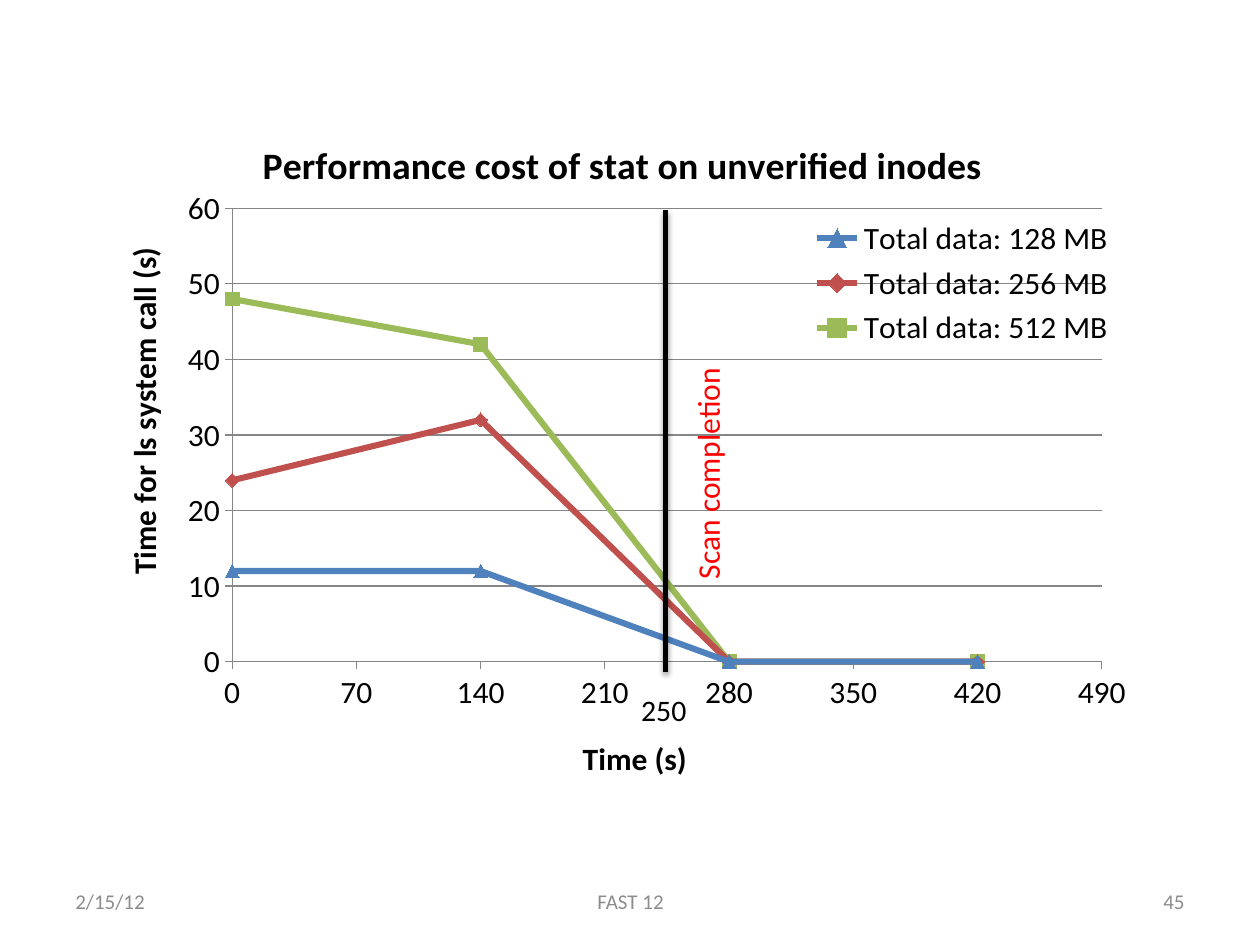
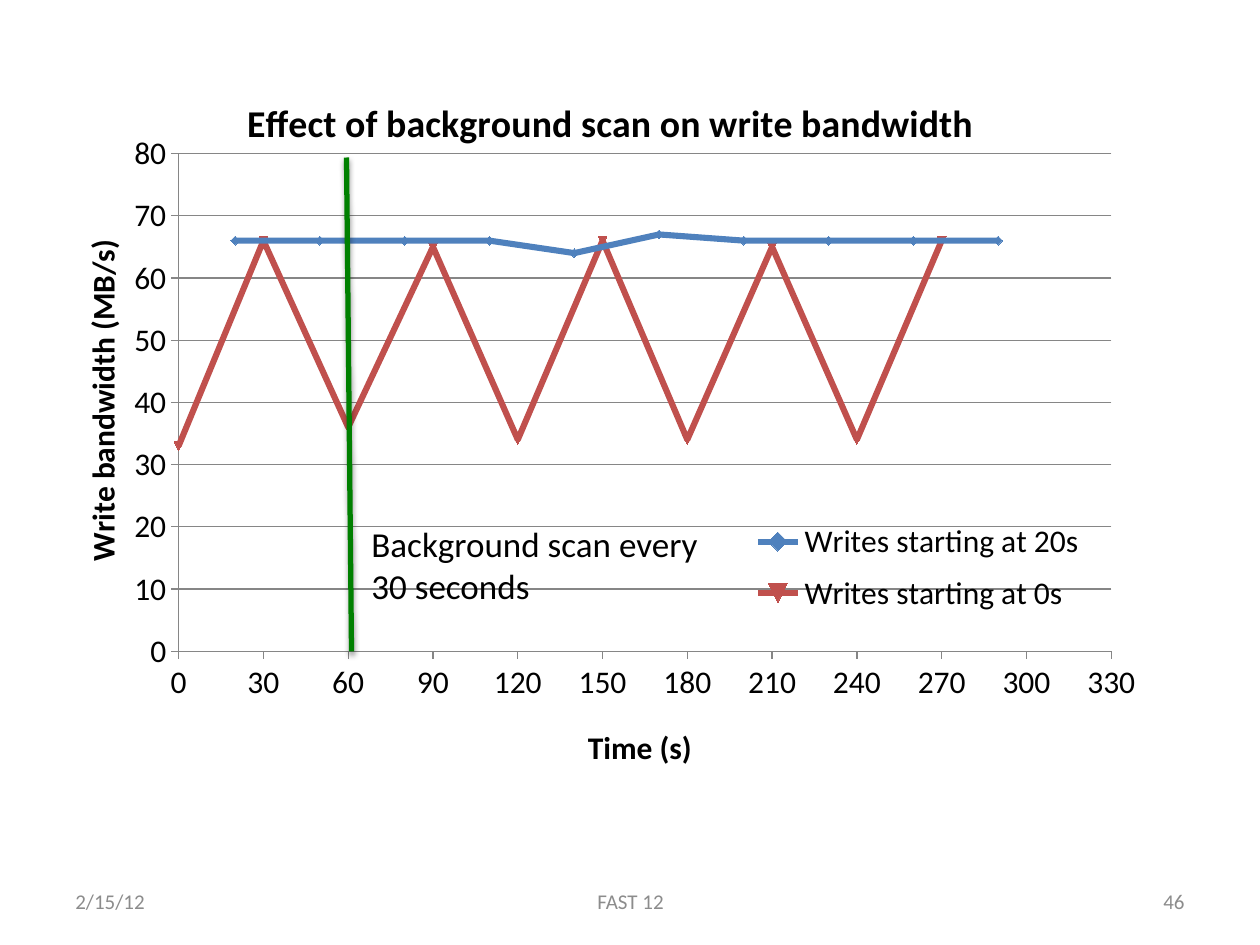
import pptx
import pptx.chart.data
import pptx.dml.color
import pptx.enum.chart
import pptx.enum.shapes
import pptx.enum.text
import pptx.oxml
import pptx.oxml.ns
import pptx.util
from dataclasses import dataclass

Inches, Pt = pptx.util.Inches, pptx.util.Pt
ALIGN = pptx.enum.text.PP_ALIGN
ANCHOR = pptx.enum.text.MSO_ANCHOR
MARKER = pptx.enum.chart.XL_MARKER_STYLE
qn = pptx.oxml.ns.qn


@dataclass(frozen=True)
class Theme:
    font: str = "Calibri"
    text: str = "000000"
    footer: str = "8C8C8C"
    grid: str = "868686"
    blue: str = "4F81BD"
    red: str = "C0504D"
    green: str = "9BBB59"
    scan_green: str = "008000"
    alert: str = "FF0000"
    footer_size: float = 12
    chart_size: float = 18
    title_size: float = 21.6
    series_width: float = 3.5
    rule_width: float = 3


T = Theme()

# Content: boxes are left, top, width, height in inches;
# layouts are fractions of the chart area
FOOTERS = [
    ("2/15/12", (0.5, 6.95, 2.33, 0.4), ALIGN.LEFT),
    ("FAST 12", (3.42, 6.95, 3.17, 0.4), ALIGN.CENTER),
    ("{number}", (7.17, 6.95, 2.33, 0.4), ALIGN.RIGHT),
]

STAT_TIMES = (0, 140, 280, 420)
SLIDES = [
    {
        "number": 45,
        "box": (0.67, 0.83, 8.5, 5.42),
        "title": ("Performance cost of stat on unverified inodes", (0.16, 0.04)),
        "x_axis": ("Time (s)", (0.46, 0.93), 490, 70),
        "y_axis": ("Time for ls system call (s)", (0.03, 0.21), 60, 10),
        "plot": (0.138, 0.154, 0.812, 0.673),
        "legend": (0.68, 0.16, 0.28, 0.21),
        "marker_size": 8,
        "series": [
            ("Total data: 128 MB", T.blue, MARKER.TRIANGLE, STAT_TIMES, (12, 12, 0, 0)),
            ("Total data: 256 MB", T.red, MARKER.DIAMOND, STAT_TIMES, (24, 32, 0, 0)),
            ("Total data: 512 MB", T.green, MARKER.SQUARE, STAT_TIMES, (48, 42, 0, 0)),
        ],
        "rule": ((5.28, 5.33), (5.28, 1.67), T.text),
        "labels": [
            ("250", (4.99, 5.44, 0.67, 0.39), 17, T.text, 0),
            ("Scan completion", (4.15, 2.93, 3.03, 0.5), 18, T.alert, 270),
        ],
    },
    {
        "number": 46,
        "box": (0.42, 0.42, 8.75, 5.75),
        "title": ("Effect of background scan on write bandwidth", (0.17, 0.05)),
        "x_axis": ("Time (s)", (0.48, 0.92), 330, 30),
        "y_axis": ("Write bandwidth (MB/s)", (0.02, 0.25), 80, 10),
        "plot": (0.114, 0.139, 0.846, 0.687),
        "legend": (0.63, 0.63, 0.31, 0.16),
        "marker_size": 5,
        "series": [
            ("Writes starting at 20s", T.blue, None, range(20, 300, 30),
             (66, 66, 66, 66, 64, 67, 66, 66, 66, 66)),
            ("Writes starting at 0s", T.red, None, range(0, 300, 30),
             (33, 66, 36, 65, 34, 66, 34, 65, 34, 66)),
        ],
        "rule": ((2.79, 5.17), (2.75, 1.25), T.scan_green),
        "labels": [
            ("Background scan every 30 seconds", (2.85, 4.1, 3.03, 0.77), 20, T.text, 0),
        ],
    },
]


# Helpers
def rgb(value):
    return pptx.dml.color.RGBColor.from_string(value)


def style_font(font, size, color, bold=False):
    font.name, font.size, font.bold = T.font, Pt(size), bold
    font.color.rgb = rgb(color)


def style_line(line, color, width):
    line.color.rgb = rgb(color)
    line.width = Pt(width)


def add_text(slide, text, box, size, color, align=ALIGN.LEFT, anchor=ANCHOR.TOP):
    sp = slide.shapes.add_textbox(*map(Inches, box))
    tf = sp.text_frame
    tf.word_wrap = True
    tf.vertical_anchor = anchor
    p = tf.paragraphs[0]
    p.text, p.alignment = text, align
    style_font(p.font, size, color)
    return sp


def place(element, fractions, inner=False):
    """Give a chart part a manual layout: x, y and optionally w, h."""
    for old in element.findall(qn("c:layout")):
        element.remove(old)
    target = '<c:layoutTarget val="inner"/>' if inner else ""
    modes = '<c:xMode val="edge"/><c:yMode val="edge"/>'
    sizes = "".join(f'<c:{k} val="{v}"/>' for k, v in zip("xywh", fractions))
    layout = pptx.oxml.parse_xml(
        f'<c:layout {pptx.oxml.ns.nsdecls("c")}><c:manualLayout>'
        f'{target}{modes}{sizes}</c:manualLayout></c:layout>')
    before = [e for e in element if e.tag in (qn("c:tx"), qn("c:legendPos"))]
    element.insert(len(before), layout)


def set_title(title, text, position, size, rotated=False):
    tf = title.text_frame
    p = tf.paragraphs[0]
    p.text = text
    style_font(p.font, size, T.text, bold=True)
    if rotated:
        body = tf._txBody.find(qn("a:bodyPr"))
        body.set("rot", "-5400000")
        body.set("vert", "horz")
    place(title._element, position)


def style_axis(axis, text, position, maximum, step, vertical):
    axis.minimum_scale, axis.maximum_scale, axis.major_unit = 0, maximum, step
    axis.major_tick_mark = pptx.enum.chart.XL_TICK_MARK.OUTSIDE
    axis.minor_tick_mark = pptx.enum.chart.XL_TICK_MARK.NONE
    axis.has_major_gridlines = vertical
    if vertical:
        style_line(axis.major_gridlines.format.line, T.grid, 0.75)
    style_line(axis.format.line, T.grid, 0.75)
    axis.has_title = True
    set_title(axis.axis_title, text, position, T.chart_size, vertical)


def add_scatter(slide, spec):
    data = pptx.chart.data.XyChartData()
    for name, _, _, xs, ys in spec["series"]:
        series = data.add_series(name)
        for x, y in zip(xs, ys):
            series.add_data_point(x, y)
    chart = slide.shapes.add_chart(
        pptx.enum.chart.XL_CHART_TYPE.XY_SCATTER_LINES,
        *map(Inches, spec["box"]), data).chart
    style_font(chart.font, T.chart_size, T.text)

    # Title, axes, legend and plot area
    chart.has_title = True
    set_title(chart.chart_title, *spec["title"], T.title_size)
    style_axis(chart.category_axis, *spec["x_axis"], vertical=False)
    style_axis(chart.value_axis, *spec["y_axis"], vertical=True)
    chart.has_legend = True
    chart.legend.position = pptx.enum.chart.XL_LEGEND_POSITION.RIGHT
    chart.legend.include_in_layout = False
    style_font(chart.legend.font, T.chart_size, T.text)
    place(chart.legend._element, spec["legend"])
    place(chart._chartSpace.find(".//" + qn("c:plotArea")), spec["plot"], inner=True)

    # Series
    plot = chart.plots[0]
    plot.vary_by_categories = False
    for series, (_, color, symbol, _, _) in zip(plot.series, spec["series"]):
        series.smooth = False
        style_line(series.format.line, color, T.series_width)
        marker = series.marker
        marker.size = spec["marker_size"]
        if symbol is not None:
            marker.style = symbol
        marker.format.fill.solid()
        marker.format.fill.fore_color.rgb = rgb(color)
        marker.format.line.color.rgb = rgb(color)


def add_rule(slide, start, end, color):
    line = slide.shapes.add_connector(
        pptx.enum.shapes.MSO_CONNECTOR.STRAIGHT, *map(Inches, start + end))
    style_line(line.line, color, T.rule_width)
    line._element.spPr.append(pptx.oxml.parse_xml(
        f'<a:effectLst {pptx.oxml.ns.nsdecls("a")}>'
        f'<a:outerShdw blurRad="{Pt(3.1)}" dist="{Pt(1.6)}" dir="5400000" rotWithShape="0">'
        f'<a:srgbClr val="{T.text}"><a:alpha val="38000"/></a:srgbClr>'
        '</a:outerShdw></a:effectLst>'))


def main():
    prs = pptx.Presentation()
    prs.slide_width, prs.slide_height = Inches(10), Inches(7.5)
    for spec in SLIDES:
        slide = prs.slides.add_slide(prs.slide_layouts[6])
        for text, box, align in FOOTERS:
            add_text(slide, text.format(number=spec["number"]), box,
                     T.footer_size, T.footer, align, ANCHOR.MIDDLE)
        add_scatter(slide, spec)
        add_rule(slide, *spec["rule"])
        for text, box, size, color, rotation in spec["labels"]:
            add_text(slide, text, box, size, color).rotation = rotation
    prs.save("out.pptx")


if __name__ == "__main__":
    main()
